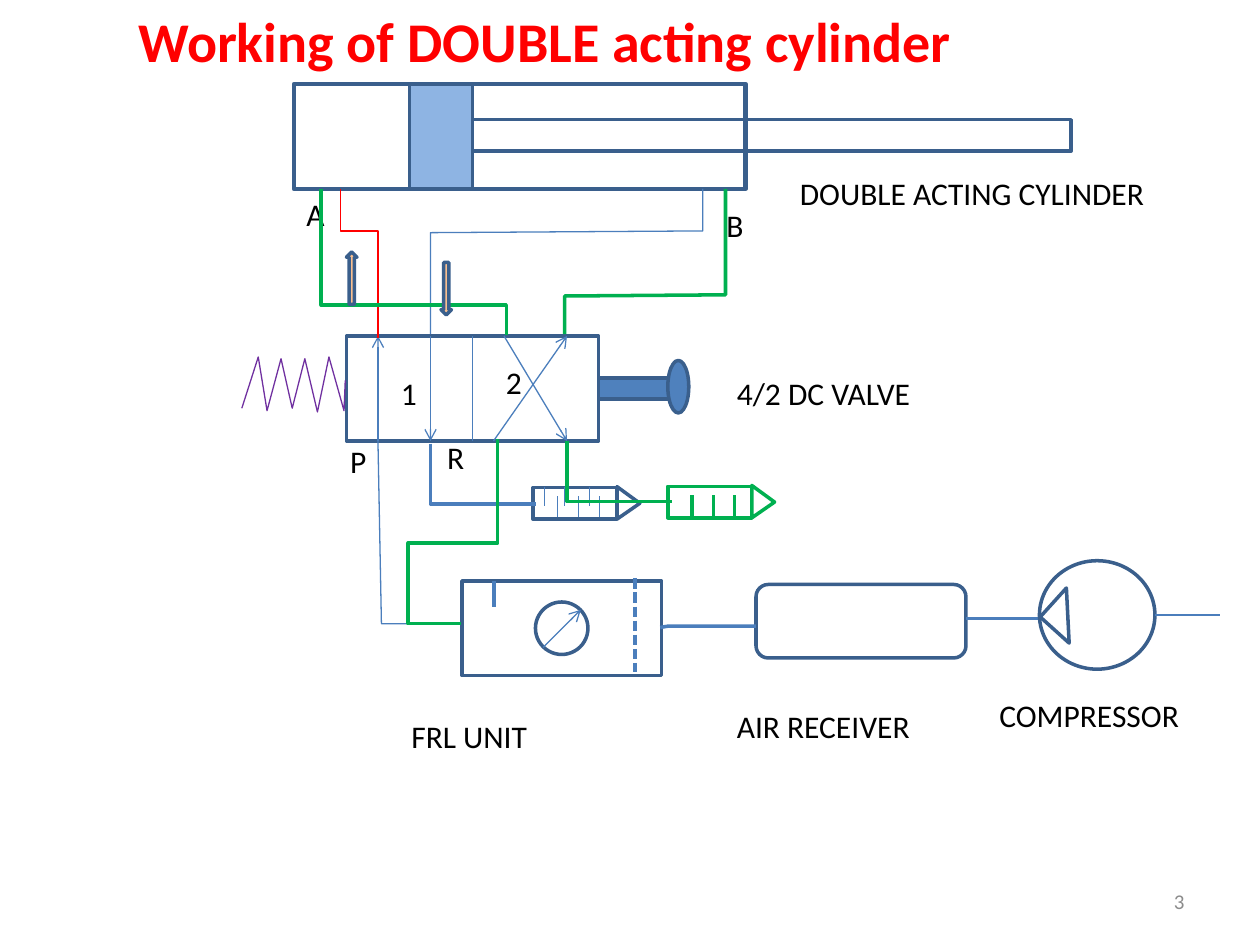
from lxml.etree import SubElement
from pptx import Presentation
from pptx.dml.color import RGBColor
from pptx.enum.dml import MSO_LINE
from pptx.enum.shapes import MSO_CONNECTOR as CONN, MSO_SHAPE as SHAPE
from pptx.enum.text import MSO_ANCHOR as ANCHOR, MSO_AUTO_SIZE as AUTO, PP_ALIGN as ALIGN
from pptx.oxml.ns import qn
from pptx.util import Pt

OUTLINE = RGBColor(0x3A, 0x5F, 0x8C)
BLUE = RGBColor(0x4B, 0x7E, 0xBC)
PLUNGER = RGBColor(0x4F, 0x81, 0xBD)
PISTON = RGBColor(0x8E, 0xB4, 0xE3)
PEACH = RGBColor(0xFA, 0xC0, 0x90)
GREEN = RGBColor(0x00, 0xB0, 0x50)
PURPLE = RGBColor(0x70, 0x30, 0xA0)
RED = RGBColor(0xFF, 0x00, 0x00)
GREY = RGBColor(0x8C, 0x8C, 0x8C)
BLACK = RGBColor(0x00, 0x00, 0x00)
WHITE = RGBColor(0xFF, 0xFF, 0xFF)
THIN, THICK = 0.75, 2


def pen(sp, color, width):
    sp.line.color.rgb = color
    sp.line.width = Pt(width)


def add_part(s, kind, box, fill=None, color=OUTLINE, width=THICK):
    sp = s.shapes.add_shape(kind, *map(Pt, box))
    sp.shadow.inherit = False
    if fill is None:
        sp.fill.background()
    else:
        sp.fill.solid()
        sp.fill.fore_color.rgb = fill
    pen(sp, color, width)
    return sp


def add_path(s, origin, points, color=BLUE, width=THIN, close=False):
    """Draw an unfilled outline through points given relative to origin."""
    x, y = origin
    first, *rest = [(Pt(x + dx), Pt(y + dy)) for dx, dy in points]
    builder = s.shapes.build_freeform(*first, scale=1.0)
    builder.add_line_segments(rest, close=close)
    sp = builder.convert_to_shape()
    sp.shadow.inherit = False
    sp.fill.background()
    pen(sp, color, width)


def add_line(s, origin, start, end, color=BLUE, width=THIN, arrow=False):
    """Draw a straight line between two points given relative to origin."""
    x, y = origin
    ends = (x + start[0], y + start[1], x + end[0], y + end[1])
    line = s.shapes.add_connector(CONN.STRAIGHT, *map(Pt, ends))
    pen(line, color, width)
    if arrow:
        SubElement(line.line._get_or_add_ln(), qn("a:tailEnd"), type="arrow")
    SubElement(line._element.spPr, qn("a:effectLst"))
    return line


def add_text(s, text, box, size=18, color=BLACK, bold=False,
             align=ALIGN.LEFT, anchor=ANCHOR.TOP):
    tf = s.shapes.add_textbox(*map(Pt, box)).text_frame
    for name, value in dict(word_wrap=True, auto_size=AUTO.NONE,
                            vertical_anchor=anchor).items():
        setattr(tf, name, value)
    p = tf.paragraphs[0]
    p.alignment = align
    r = p.add_run()
    r.text = text
    for name, value in dict(name="Calibri", size=Pt(size), bold=bold).items():
        setattr(r.font, name, value)
    r.font.color.rgb = color


def draw_cylinder(s, box):
    x, y, w, h = box
    add_part(s, SHAPE.RECTANGLE, box, WHITE, width=2.5)
    add_part(s, SHAPE.RECTANGLE, (x + 66, y, 36, h), PISTON)
    add_part(s, SHAPE.RECTANGLE, (x + 102, y + 20.4, 342, 18))


def draw_valve(s, box):
    x, y, w, h = box
    body = add_part(s, SHAPE.RECTANGLE, box)
    divider = add_line(s, (x, y), (w / 2, 0), (w / 2, h))
    divider.begin_connect(body, 0)
    divider.end_connect(body, 2)
    for start, end in [((18, h), (18, 0)), ((48, 0), (48, h)),
                       ((84, h), (126, 0)), ((90, 0), (126, h))]:
        add_line(s, (x, y), start, end, arrow=True)
    add_part(s, SHAPE.RECTANGLE, (x + w, y + 24, 42, 12), PLUNGER)
    add_part(s, SHAPE.OVAL, (x + w + 39.6, y + 14, 12, 30), PLUNGER)
    spring = [(-59.8, 41.3), (-50.4, 12), (-45.4, 42.7), (-37.4, 13), (-31, 41.3),
              (-23.8, 13), (-16.6, 43.4), (-10, 12), (-1.4, 42.7), (-0.7, 25.4)]
    add_path(s, (x, y), spring, PURPLE)


def draw_air_lines(s, box):
    """Draw the pipes around the valve that occupies the box."""
    x, y, w, h = box
    pipes = [
        (RED, THIN, [(-3.6, -84), (-3.6, -60), (18, -60), (18, 1)]),
        (BLUE, THIN, [(48, -1), (48, -59), (203.6, -60), (203.6, -84)]),
        (BLUE, THIN, [(18, h), (20, 164.4), (65, 164.4)]),
        (BLUE, THICK, [(48, 61.5), (48, 96), (108, 96)]),
        (GREEN, THICK, [(216.6, -84), (216.6, -23.5), (124.7, -22.8), (124.7, -1)]),
        (GREEN, THICK, [(-14.4, -84), (-14.4, -17.6), (91.4, -17.6), (91.4, -0.5)]),
        (GREEN, THICK, [(126, h), (126, 94.6), (185.8, 94.6)]),
        (GREEN, THICK, [(65.5, 164.4), (35.3, 164.4), (35.3, 118.3),
                        (86.4, 118.3), (86.4, 58.6)]),
    ]
    for color, width, points in pipes:
        add_path(s, (x, y), points, color, width)
    add_part(s, SHAPE.UP_ARROW, (x, y - 48, 6, 30), PEACH)
    add_part(s, SHAPE.DOWN_ARROW, (x + 54, y - 42, 6, 30), PEACH)


def draw_silencer(s, box, color, tick_color, tick_width):
    x, y, w, h = box
    add_part(s, SHAPE.RECTANGLE, box, color=color)
    add_path(s, (x, y), [(w, h), (w, -0.5), (w + 13, h / 2)], color, THICK, close=True)
    for i in range(3):
        dx = 14 + 12 * i
        add_line(s, (x, y), (dx, 17), (dx, 5), tick_color, tick_width)


def draw_frl_unit(s, box):
    x, y, w, h = box
    add_part(s, SHAPE.RECTANGLE, box)
    dashes = add_line(s, (x, y), (99, -1.5), (99, 52), width=THICK)
    dashes.line.dash_style = MSO_LINE.SQUARE_DOT
    add_line(s, (x, y), (18.2, 0), (18.2, 15), width=THICK)
    add_part(s, SHAPE.OVAL, (x + 42, y + 12, 30, 30))
    add_line(s, (x, y), (46.3, 38), (67.9, 16.5), arrow=True)


def draw_receiver(s, box):
    x, y, w, h = box
    add_part(s, SHAPE.ROUNDED_RECTANGLE, box)
    inlet = [(-54.7, 24.6), (-50, 23.8), (-42, 23.8), (0, 23.8)]
    add_path(s, (x, y), inlet, width=THICK)
    add_line(s, (x, y), (w, 19.5), (w + 42.5, 19.5), width=THICK)


def draw_compressor(s, box):
    x, y, w, h = box
    add_part(s, SHAPE.OVAL, box)
    add_part(s, SHAPE.RIGHT_TRIANGLE, (x + 5, y + 20.2, 22.3, 22.3)).rotation = 42.1
    add_line(s, (x, y), (w, h / 2), (w + 37, h / 2))


def draw_labels(s):
    add_text(s, "Working of DOUBLE acting cylinder", (72, 0, 600, 46), 32, RED, True)
    for text, x, y, w in [
        ("A", 168, 108, 30), ("B", 408, 114, 36), ("P", 193, 249, 24),
        ("R", 248.4, 247, 18), ("1", 222, 210, 18), ("2", 282, 204, 36),
        ("4/2 DC VALVE", 414, 210, 258), ("DOUBLE ACTING CYLINDER", 450, 96, 228),
        ("FRL UNIT", 228, 406, 150), ("AIR RECEIVER", 414, 400.4, 138),
        ("COMPRESSOR", 564, 394.4, 126),
    ]:
        add_text(s, text, (x, y, w, 29))
    add_text(s, "3", (516, 500.5, 168, 28.75), 12, GREY,
             align=ALIGN.RIGHT, anchor=ANCHOR.MIDDLE)


def main():
    prs = Presentation()
    prs.slide_width, prs.slide_height = Pt(720), Pt(540)
    s = prs.slides.add_slide(prs.slide_layouts[6])
    valve = (198, 192, 144, 60)
    draw_cylinder(s, (168, 48, 258, 60))
    draw_valve(s, valve)
    silencer = (304.6, 278.6, 48, 18)
    draw_silencer(s, silencer, OUTLINE, BLUE, THIN)
    for dx in (6.5, 18, 32.4):
        add_line(s, silencer[:2], (dx, -0.5), (dx, 10.5))
    draw_silencer(s, (381.6, 277.9, 48, 18), GREEN, GREEN, THICK)
    draw_frl_unit(s, (264, 332, 114, 54))
    draw_receiver(s, (432, 334, 120, 42))
    draw_compressor(s, (594, 320.4, 66, 62))
    draw_labels(s)
    draw_air_lines(s, valve)
    prs.save("out.pptx")


if __name__ == "__main__":
    main()
